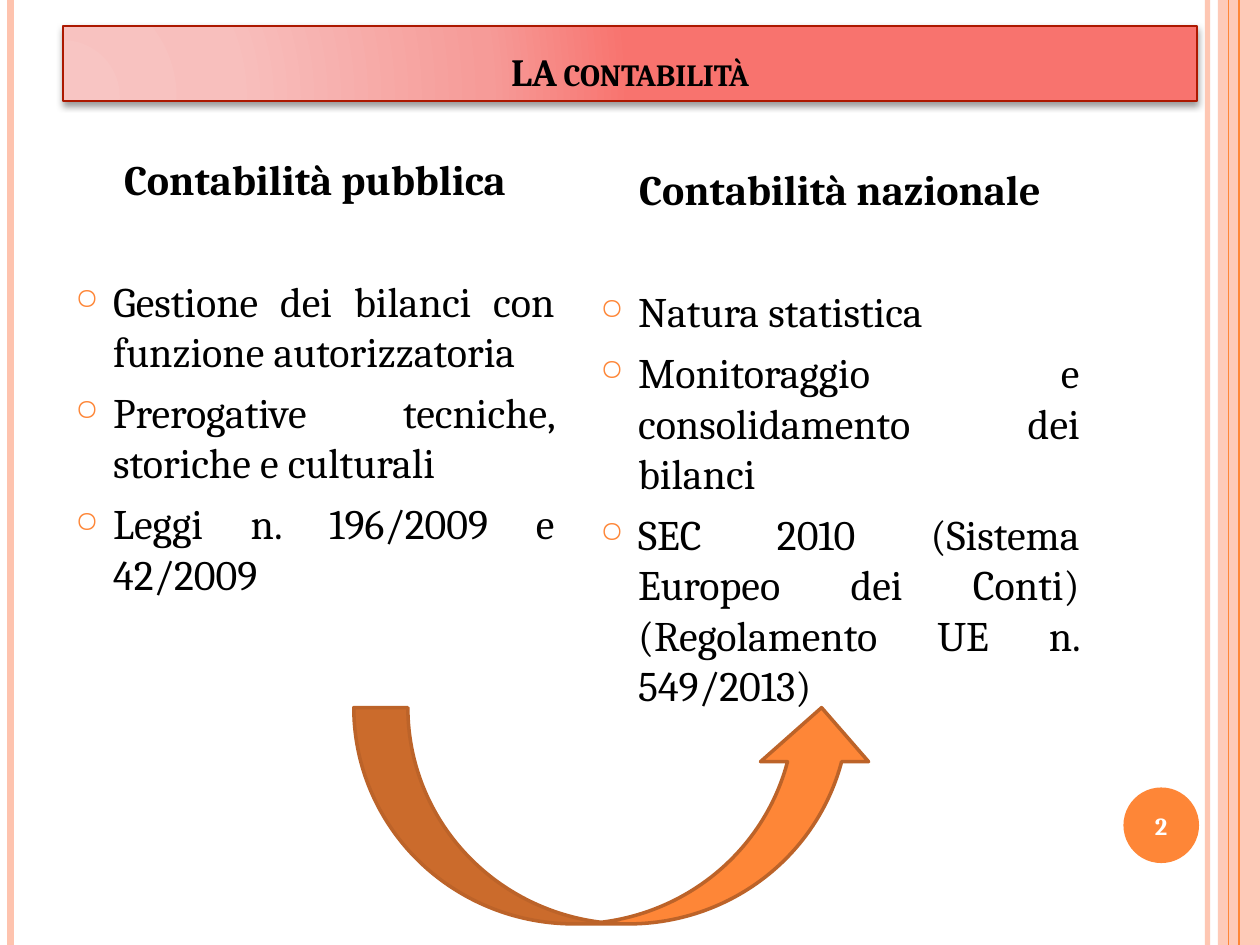
"""Build a slide that compares public and national accounting."""
from dataclasses import dataclass
from typing import Optional

import pptx
import pptx.util
import pptx.dml.color
import pptx.enum.shapes
import pptx.enum.text
import pptx.oxml
import pptx.oxml.ns

COLS, ROWS = 120, 90
SHAPE = pptx.enum.shapes.MSO_SHAPE
ALIGN = pptx.enum.text.PP_ALIGN
ANCHOR = pptx.enum.text.MSO_ANCHOR
NS = pptx.oxml.ns.nsdecls("a")


@dataclass(frozen=True)
class Theme:
    font: str = "Cambria"
    accent: str = "FE8637"
    pale: str = "FEC3AE"
    arrow_edge: str = "BC6329"
    title_edge: str = "AC1800"
    title_stops: tuple = ((0, "F8C5C3"), (30, "F8BFBD"), (75, "F69B98"), (100, "F8736E"))
    text: str = "000000"
    light: str = "FFFFFF"
    title_size: int = 22
    body_size: int = 24
    number_size: int = 14


@dataclass(frozen=True)
class Box:
    col: float
    row: float
    cols: float
    rows: float


@dataclass(frozen=True)
class Stripe:
    col: float
    color: str
    width: float
    alpha: int = 100


@dataclass(frozen=True)
class Topic:
    box: Box
    heading: str
    points: tuple


T = Theme()
STRIPES = (
    Stripe(115, T.pale, 3, 93),
    Stripe(1, T.pale, 4.5),
    Stripe(118, T.accent, 1.5),
    Stripe(117, T.accent, 0.75),
)
TOPICS = (
    Topic(Box(6, 14, 48, 67), "Contabilità pubblica", (
        "Gestione dei bilanci con funzione autorizzatoria",
        "Prerogative tecniche, storiche e culturali",
        "Leggi n. 196/2009 e 42/2009")),
    Topic(Box(56, 15, 48, 66), "Contabilità nazionale", (
        "Natura statistica",
        "Monitoraggio e consolidamento dei bilanci",
        "SEC 2010 (Sistema Europeo dei Conti) (Regolamento UE n. 549/2013)")),
)

prs = pptx.Presentation()
prs.slide_width, prs.slide_height = pptx.util.Inches(10), pptx.util.Inches(7.5)


def x(cols: float) -> int:
    return round(prs.slide_width * cols / COLS)


def y(rows: float) -> int:
    return round(prs.slide_height * rows / ROWS)


def frame(box: Box) -> tuple:
    return x(box.col), y(box.row), x(box.cols), y(box.rows)


def rgb(color: str):
    return pptx.dml.color.RGBColor.from_string(color)


def xml(body: str):
    return pptx.oxml.parse_xml(body.replace(" ", f" {NS} ", 1))


def set_alpha(element, percent: int) -> None:
    if percent < 100:
        clr = next(element.iter(pptx.oxml.ns.qn("a:srgbClr")))
        clr.append(xml(f'<a:alpha val="{percent * 1000}"/>'))


def add_stripe(s, stripe: Stripe) -> None:
    line = s.shapes.add_connector(
        pptx.enum.shapes.MSO_CONNECTOR.STRAIGHT, x(stripe.col), 0, x(stripe.col), y(ROWS))
    line.line.color.rgb = rgb(stripe.color)
    line.line.width = pptx.util.Pt(stripe.width)
    set_alpha(line._element.spPr, stripe.alpha)
    line._element.spPr.append(xml("<a:effectLst />"))


def add_shape(s, kind, box: Box, fill: str, edge: Optional[str] = None, alpha: int = 100):
    sp = s.shapes.add_shape(kind, *frame(box))
    sp.shadow.inherit = False
    sp.fill.solid()
    sp.fill.fore_color.rgb = rgb(fill)
    set_alpha(sp._element.spPr, alpha)
    if edge:
        sp.line.color.rgb = rgb(edge)
        sp.line.width = pptx.util.Pt(2)
    else:
        sp.line.fill.background()
    return sp


def write(p, text: str, size: int, color: str, align, bold: bool = False) -> None:
    p.text = text
    p.alignment = align
    f = p.runs[0].font
    f.name, f.size, f.bold = T.font, pptx.util.Pt(size), bold
    f.color.rgb = rgb(color)


def add_bullet(p) -> None:
    pPr = p._p.get_or_add_pPr()
    pPr.set("marL", str(pptx.util.Inches(0.3)))
    pPr.set("indent", str(-pptx.util.Inches(0.3)))
    for part in (f'<a:buClr ><a:srgbClr val="{T.accent}"/></a:buClr>',
                 '<a:buSzPct val="70000"/>', '<a:buChar char="○"/>'):
        pPr.append(xml(part))


def add_topic(s, topic: Topic) -> None:
    tf = s.shapes.add_textbox(*frame(topic.box)).text_frame
    tf.word_wrap = True
    p = tf.paragraphs[0]
    write(p, topic.heading, T.body_size, T.text, ALIGN.CENTER, True)
    p.space_before = pptx.util.Pt(6)
    for i, point in enumerate(topic.points):
        p = tf.add_paragraph()
        write(p, point, T.body_size, T.text, ALIGN.JUSTIFY)
        p.space_before = pptx.util.Pt(6 if i else 41)
        add_bullet(p)


def format_title(title, text: str, box: Box) -> None:
    title.left, title.top, title.width, title.height = frame(box)
    tf = title.text_frame
    tf.auto_size = pptx.enum.text.MSO_AUTO_SIZE.NONE
    tf.vertical_anchor = ANCHOR.BOTTOM
    write(tf.paragraphs[0], text, T.title_size, T.text, ALIGN.CENTER, True)
    tf.paragraphs[0].runs[0].font._element.set("cap", "small")
    title.fill.solid()
    title.line.color.rgb = rgb(T.title_edge)
    title.line.width = pptx.util.Pt(1)
    stops = "".join(f'<a:gs pos="{pos * 1000}"><a:srgbClr val="{color}"/></a:gs>'
                    for pos, color in T.title_stops)
    spPr = title._element.spPr
    spPr.replace(spPr.find(pptx.oxml.ns.qn("a:solidFill")), xml(
        f'<a:gradFill rotWithShape="1"><a:gsLst>{stops}</a:gsLst><a:path path="circle">'
        '<a:fillToRect l="5000" t="100000" r="120000" b="10000"/></a:path></a:gradFill>'))
    spPr.append(xml(
        f'<a:effectLst ><a:outerShdw blurRad="{pptx.util.Pt(4)}" dist="{pptx.util.Pt(2)}" '
        f'dir="5400000" rotWithShape="0"><a:srgbClr val="{T.text}"><a:alpha val="40000"/>'
        '</a:srgbClr></a:outerShdw></a:effectLst>'))


def main() -> None:
    s = prs.slides.add_slide(prs.slide_layouts.get_by_name("Title Only"))
    format_title(s.shapes.title, "LA contabilità", Box(6, 2.5, 108, 7.1))
    add_shape(s, SHAPE.RECTANGLE, Box(116, 0, 4, ROWS), T.pale, alpha=87)
    for stripe in STRIPES:
        add_stripe(s, stripe)
    for topic in TOPICS:
        add_topic(s, topic)
    badge = add_shape(s, SHAPE.OVAL, Box(107, 75, 7.2, 7.2), T.accent)
    badge.text_frame.vertical_anchor = ANCHOR.MIDDLE
    write(badge.text_frame.paragraphs[0], "2", T.number_size, T.light, ALIGN.CENTER, True)
    add_shape(s, SHAPE.CURVED_UP_ARROW, Box(33.7, 67.4, 49.7, 20.6), T.accent, T.arrow_edge)
    prs.save("out.pptx")


if __name__ == "__main__":
    main()
